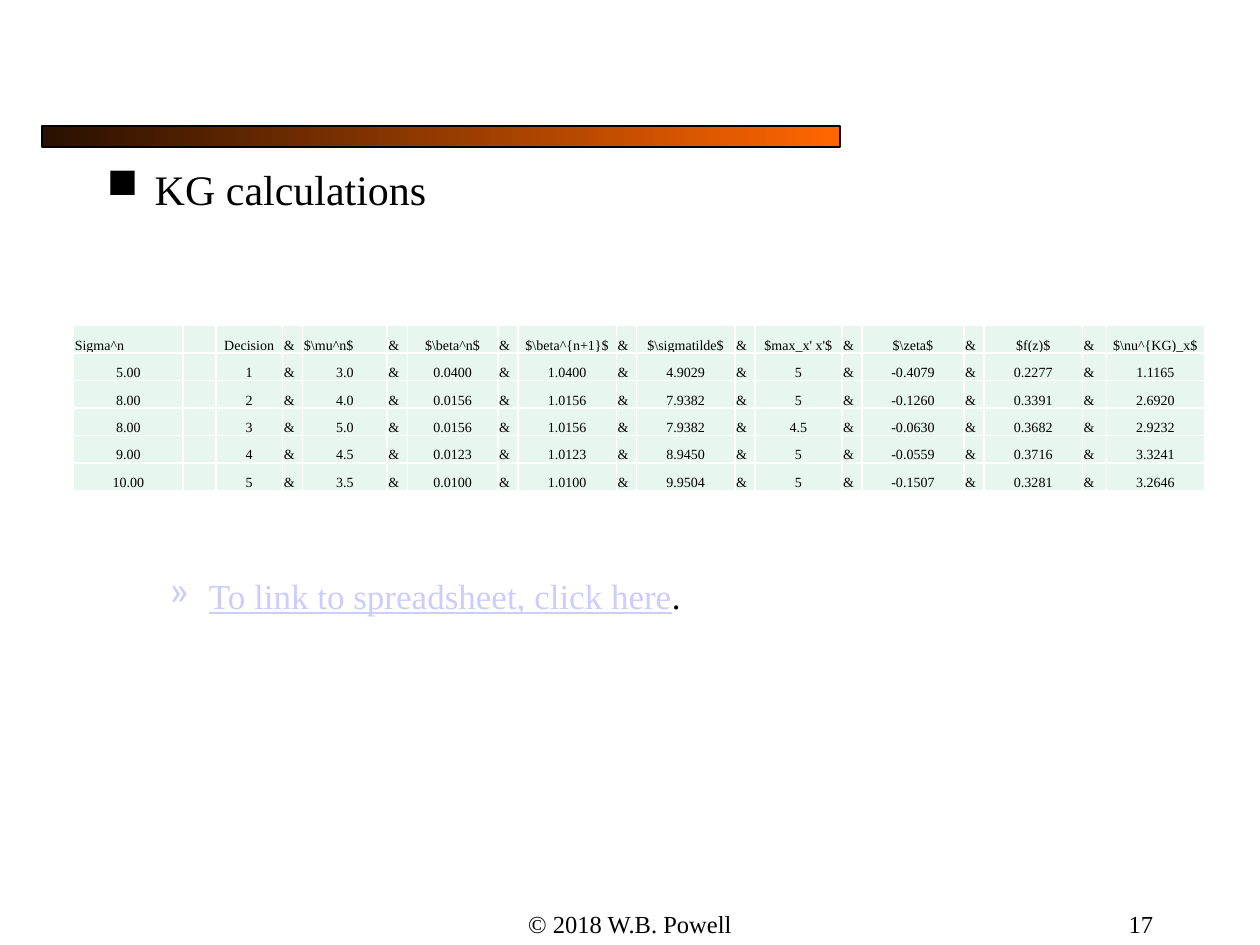
from lxml.etree import SubElement
from pptx import Presentation
from pptx.dml.color import RGBColor
from pptx.enum.shapes import MSO_SHAPE
from pptx.enum.text import MSO_ANCHOR, PP_ALIGN
from pptx.oxml.ns import qn
from pptx.util import Inches, Pt

FONT, INK, LINK, MINT, WHITE = "Times New Roman", "000000", "CCCCFF", "E7F6EF", "FFFFFF"

deck = Presentation()
deck.slide_width, deck.slide_height = Inches(10), Inches(7.5)
page = deck.slides.add_slide(deck.slide_layouts[6])
COLUMN, ROW = deck.slide_width // 120, deck.slide_height // 90  # twelfths of an inch


def hue(code):
    """Turn a hex string into a colour."""
    return RGBColor.from_string(code)


def write(para, text, size, color=INK, **formats):
    """Add a formatted run of text to a paragraph."""
    span = para.add_run()
    span.text = text
    span.font.color.rgb = hue(color)
    for name, value in {"name": FONT, "size": Pt(size), **formats}.items():
        setattr(span.font, name, value)


# Gradient rule below the title area
bar = page.shapes.add_shape(MSO_SHAPE.RECTANGLE, 4 * COLUMN, 12 * ROW, 76 * COLUMN, 2 * ROW)
bar.shadow.inherit = False
bar.line.color.rgb = hue(INK)
bar.line.width = Pt(0.75)
bar.fill.gradient()
bar.fill.gradient_angle = 0
for stop, (position, color) in zip(bar.fill.gradient_stops, [(0, "291000"), (1, "FF6600")]):
    stop.position = position
    stop.color.rgb = hue(color)

# Body: heading and the line below the table, set apart by paragraph spacing
body = page.shapes.add_textbox(9 * COLUMN, 15 * ROW, 102 * COLUMN, 65 * ROW).text_frame
body.word_wrap = True
heading, note = body.paragraphs[0], body.add_paragraph()
note.level = 1
write(heading, "KG calculations", 24)
write(note, "To link to spreadsheet, click here", 20, LINK, underline=True)
write(note, ".", 20)
for para, mark, margin, hanging, gap in [(heading, "■", 0.38, 0.38, 3), (note, "»", 0.81, 0.31, 206)]:
    para.space_before = Pt(gap)
    settings = para._p.get_or_add_pPr()
    settings.set("marL", str(Inches(margin)))
    settings.set("indent", str(-Inches(hanging)))
    SubElement(settings, qn("a:buChar")).set("char", mark)

# Table: each "&" column parts two value columns
HEADERS = ["Decision", r"$\mu^n$", r"$\beta^n$", r"$\beta^{n+1}$", r"$\sigmatilde$",
           "$max_x' x'$", r"$\zeta$", "$f(z)$", r"$\nu^{KG)_x$"]
RECORDS = [
    ["Sigma^n", HEADERS],
    ["5.00", ["1", "3.0", "0.0400", "1.0400", "4.9029", "5", "-0.4079", "0.2277", "1.1165"]],
    ["8.00", ["2", "4.0", "0.0156", "1.0156", "7.9382", "5", "-0.1260", "0.3391", "2.6920"]],
    ["8.00", ["3", "5.0", "0.0156", "1.0156", "7.9382", "4.5", "-0.0630", "0.3682", "2.9232"]],
    ["9.00", ["4", "4.5", "0.0123", "1.0123", "8.9450", "5", "-0.0559", "0.3716", "3.3241"]],
    ["10.00", ["5", "3.5", "0.0100", "1.0100", "9.9504", "5", "-0.1507", "0.3281", "3.2646"]],
]
WIDTHS = [0.87, 0.26, 0.53, 0.16, 0.67, 0.16, 0.72, 0.16, 0.78, 0.16,
          0.78, 0.16, 0.69, 0.16, 0.81, 0.16, 0.78, 0.19, 0.78]
CELL_FORMAT = {"vertical_anchor": MSO_ANCHOR.BOTTOM, "margin_left": Inches(0.01),
               "margin_right": Inches(0.01), "margin_top": Inches(0.01), "margin_bottom": 0}
LEFT_ALIGNED = {"&", "Sigma^n", r"$\mu^n$"}

table = page.shapes.add_table(len(RECORDS), len(WIDTHS), 7 * COLUMN, 31 * ROW,
                              Inches(sum(WIDTHS)), Inches(1.31)).table
table.first_row = table.horz_banding = False
for column, width in zip(table.columns, WIDTHS):
    column.width = Inches(width)

for row, (sigma, values) in enumerate(RECORDS):
    table.rows[row].height = Inches(1.31 / len(RECORDS))
    texts = [sigma, ""] + "\n&\n".join(values).split("\n")
    for col, text in enumerate(texts):
        cell = table.cell(row, col)
        for name, value in CELL_FORMAT.items():
            setattr(cell, name, value)
        properties = cell._tc.get_or_add_tcPr()
        for side in ("lnL", "lnR", "lnT", "lnB"):
            border = SubElement(properties, qn(f"a:{side}"), w=str(Pt(1)))
            SubElement(SubElement(border, qn("a:solidFill")), qn("a:srgbClr"), val=WHITE)
        cell.fill.solid()
        cell.fill.fore_color.rgb = hue(MINT)
        para = cell.text_frame.paragraphs[0]
        para.alignment = PP_ALIGN.LEFT if text in LEFT_ALIGNED else PP_ALIGN.CENTER
        if text:
            write(para, text, 8)
        else:
            SubElement(para._p, qn("a:endParaRPr"), sz="800")

# Footer
for left, width, text, alignment in [(41, 38, "© 2018 W.B. Powell", PP_ALIGN.CENTER),
                                     (86, 25, "17", PP_ALIGN.RIGHT)]:
    box = page.shapes.add_textbox(left * COLUMN, 86 * ROW, width * COLUMN, 6 * ROW)
    box.text_frame.word_wrap = True
    para = box.text_frame.paragraphs[0]
    para.alignment = alignment
    write(para, text, 14)

deck.save("out.pptx")
